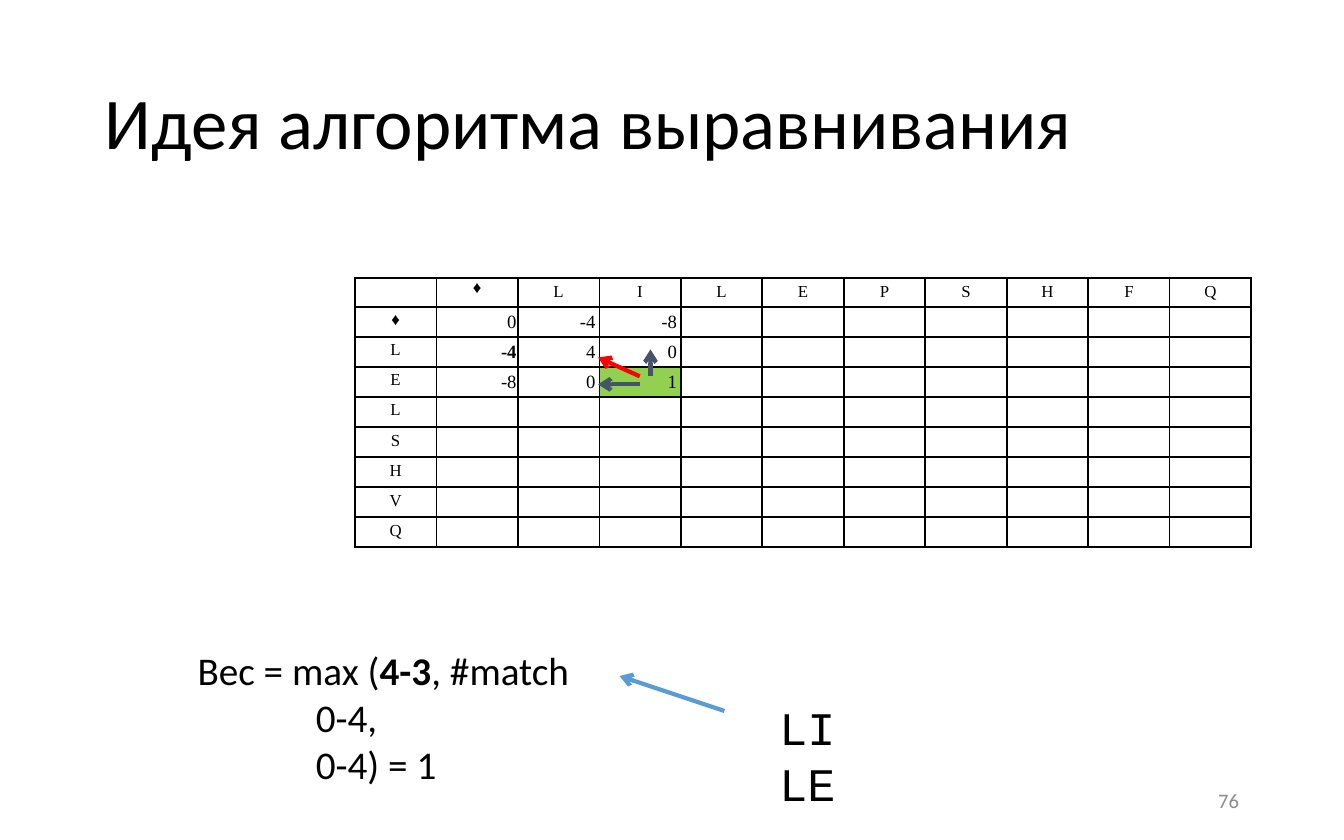
"""Build the slide on the idea of the sequence alignment algorithm."""
import pptx
import pptx.util
import pptx.dml.color
import pptx.enum.shapes
import pptx.enum.text
import pptx.oxml.ns
from lxml import etree

Inches, Pt = pptx.util.Inches, pptx.util.Pt
RGBColor = pptx.dml.color.RGBColor
ALIGN = pptx.enum.text.PP_ALIGN
ANCHOR = pptx.enum.text.MSO_ANCHOR
AUTO = pptx.enum.text.MSO_AUTO_SIZE
qn = pptx.oxml.ns.qn

BLACK = RGBColor(0x00, 0x00, 0x00)
GRAY = RGBColor(0x8C, 0x8C, 0x8C)
GREEN = RGBColor(0x92, 0xD0, 0x50)
BLUE = RGBColor(0x5B, 0x9B, 0xD5)
SLATE = RGBColor(0x44, 0x54, 0x6A)
RED = RGBColor(0xFF, 0x00, 0x00)

TITLE = "Идея алгоритма выравнивания"
ACROSS = "♦LILEPSHFQ"
DOWN = "♦LELSHVQ"
SCORES = [["0", "-4", "-8"], ["-4", "4", "0"], ["-8", "0", "1"]]
BOLD_CELL, CURRENT_CELL = (2, 1), (3, 3)
FORMULA = [[("Вес = max (", False), ("4-3", True), (", #match", False)],
           [("\t0-4,", False)],
           [("\t0-4) = 1", False)]]
PAIR = [[("LI", False)], [("LE", False)]]
PAGE = [[("76", False)]]
ARROWS = [((5.39, 5.29), (4.61, 5.03), BLUE),
          ((4.84, 2.8), (4.84, 2.6), SLATE),
          ((4.76, 2.86), (4.45, 2.86), SLATE),
          ((4.76, 2.8), (4.45, 2.66), RED)]
TABLE_BOX = (2.64, 2.07, 6.67, 2)
HEADER_HEIGHT = 0.21
TAB_STOP = 0.88


def style(font, name, size, color=BLACK, bold=False):
    font.name, font.size, font.bold = name, Pt(size), bold
    font.color.rgb = color


def set_insets(tf):
    tf.margin_left = tf.margin_right = Inches(0.09)
    tf.margin_top = tf.margin_bottom = Inches(0.04)


def add_text(s, box, lines, name, size, color=BLACK):
    tf = s.shapes.add_textbox(*map(Inches, box)).text_frame
    set_insets(tf)
    tf.word_wrap = False
    tf.auto_size = AUTO.SHAPE_TO_FIT_TEXT
    for i, line in enumerate(lines):
        p = tf.paragraphs[0] if i == 0 else tf.add_paragraph()
        if line[0][0].startswith("\t"):
            tabs = etree.SubElement(p._p.get_or_add_pPr(), qn("a:tabLst"))
            etree.SubElement(tabs, qn("a:tab"), pos=str(Inches(TAB_STOP)), algn="l")
        for text, bold in line:
            r = p.add_run()
            r.text = text
            style(r.font, name, size, color, bold)
    return tf


def add_borders(cell):
    tcPr = cell._tc.get_or_add_tcPr()
    for side in "LRTB":
        ln = etree.SubElement(tcPr, qn(f"a:ln{side}"), w=str(Pt(1)))
        fill = etree.SubElement(ln, qn("a:solidFill"))
        etree.SubElement(fill, qn("a:srgbClr"), val=str(BLACK))


def cell_text(row, col):
    if row == 0:
        return ACROSS[col - 1] if col else ""
    if col == 0:
        return DOWN[row - 1]
    if row <= len(SCORES) and col <= len(SCORES[0]):
        return SCORES[row - 1][col - 1]
    return ""


def fill_cell(cell, row, col):
    text = cell_text(row, col)
    is_score = row > 0 and col > 0
    tight = col == 1 and row <= len(SCORES)
    cell.margin_left = cell.margin_right = Inches(0.01 if tight else 0.03)
    cell.margin_top = cell.margin_bottom = Inches(0 if tight else 0.03)
    add_borders(cell)
    if (row, col) == CURRENT_CELL:
        cell.fill.solid()
        cell.fill.fore_color.rgb = GREEN
    else:
        cell.fill.background()
    p = cell.text_frame.paragraphs[0]
    if not text:
        etree.SubElement(p._p, qn("a:endParaRPr"), sz="900")
        return
    cell.vertical_anchor = ANCHOR.MIDDLE if is_score else ANCHOR.TOP
    p.text = text
    p.alignment = ALIGN.RIGHT if is_score else ALIGN.CENTER
    style(p.runs[0].font, "Times New Roman", 10 if is_score else 9,
          bold=(row, col) == BOLD_CELL)


def add_matrix(s):
    rows, cols = len(DOWN) + 1, len(ACROSS) + 1
    table = s.shapes.add_table(rows, cols, *map(Inches, TABLE_BOX)).table
    table.first_row = table.horz_banding = False
    for column in table.columns:
        column.width = Inches(TABLE_BOX[2] / cols)
    for i, row in enumerate(table.rows):
        body_height = (TABLE_BOX[3] - HEADER_HEIGHT) / (rows - 1)
        row.height = Inches(body_height if i else HEADER_HEIGHT)
        for j, cell in enumerate(row.cells):
            fill_cell(cell, i, j)


def add_arrow(s, start, end, color):
    line = s.shapes.add_connector(pptx.enum.shapes.MSO_CONNECTOR.STRAIGHT,
                                  *map(Inches, start + end))
    line.line.color.rgb = color
    line.line.width = Pt(2.25)
    etree.SubElement(line.line._get_or_add_ln(), qn("a:tailEnd"), type="arrow")
    etree.SubElement(line._element.spPr, qn("a:effectLst"))


def add_title(s):
    sp = s.shapes.title
    sp.left, sp.top, sp.width, sp.height = map(Inches, (0.69, 0.33, 8.62, 1.21))
    tf = sp.text_frame
    tf.text = TITLE
    set_insets(tf)
    tf.auto_size = AUTO.NONE
    tf.vertical_anchor = ANCHOR.MIDDLE
    p = tf.paragraphs[0]
    p.alignment = ALIGN.LEFT
    p.line_spacing = 0.9
    style(p.runs[0].font, "Calibri", 39)


def main():
    prs = pptx.Presentation()
    prs.slide_width, prs.slide_height = Inches(10), Inches(6.25)
    s = prs.slides.add_slide(prs.slide_layouts[5])
    add_title(s)
    add_matrix(s)
    add_text(s, (1.38, 4.77, 3.03, 1.15), FORMULA, "Calibri", 21)
    add_text(s, (5.71, 5.16, 0.6, 0.93), PAIR, "Courier New", 25)
    for arrow in ARROWS:
        add_arrow(s, *arrow)
    tf = add_text(s, (7.06, 5.79, 2.25, 0.33), PAGE, "Calibri", 11, GRAY)
    tf.word_wrap, tf.auto_size = True, AUTO.NONE
    tf.vertical_anchor = ANCHOR.MIDDLE
    tf.paragraphs[0].alignment = ALIGN.RIGHT
    prs.save("out.pptx")


if __name__ == "__main__":
    main()
